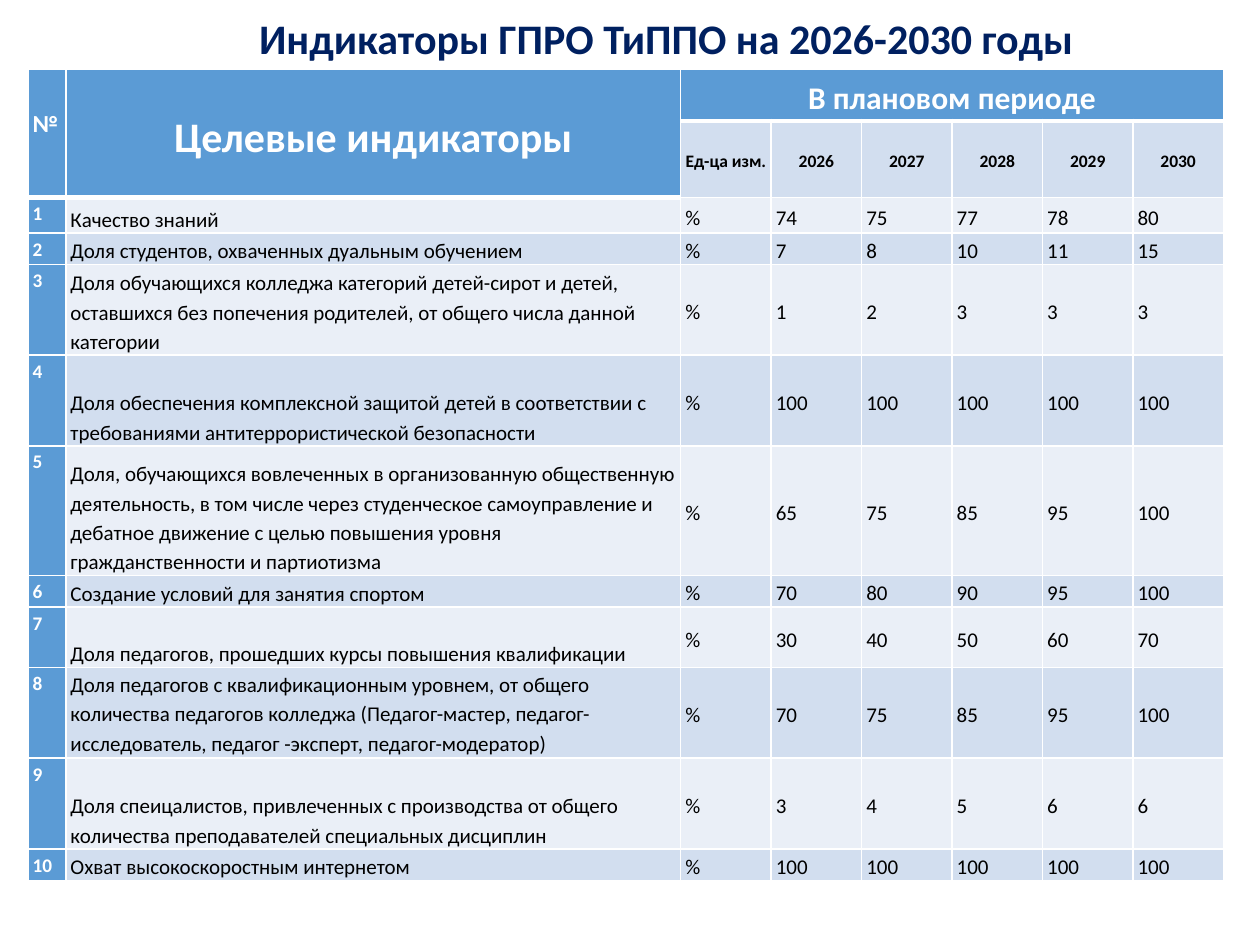
from lxml.etree import SubElement
from pptx import Presentation
from pptx.dml.color import RGBColor
from pptx.enum.text import MSO_ANCHOR, MSO_AUTO_SIZE, PP_ALIGN
from pptx.oxml.ns import qn
from pptx.util import Pt


class Theme:
    font = "Calibri"
    navy, blue, white, black = "002060", "5B9BD5", "FFFFFF", "000000"
    bands = ("EAEFF7", "D2DEEF")
    title, head, span, mark, body, index, unit = 24, 24, 18, 14, 12, 11, 10
    thin, thick = 1, 3


def write(frame, text, size, color, bold=False, align=PP_ALIGN.LEFT):
    para = frame.paragraphs[0]
    para.text = text
    para.alignment = align
    font = para.font
    font.name, font.size, font.bold = Theme.font, Pt(size), bold
    font.color.rgb = RGBColor.from_string(color)
    return para


def edge(cell, side, width):
    props = cell._tc.get_or_add_tcPr()
    line = SubElement(props, qn(f"a:ln{side}"), w=str(Pt(width)))
    fill = SubElement(line, qn("a:solidFill"))
    SubElement(fill, qn("a:srgbClr"), val=Theme.white)


years = ["2026", "2027", "2028", "2029", "2030"]

# Row height, indicator, values by year
goals = [
    (20.2, "Качество знаний", [74, 75, 77, 78, 80]),
    (18, "Доля студентов, охваченных дуальным обучением", [7, 8, 10, 11, 15]),
    (51.8, "Доля обучающихся колледжа категорий детей-сирот и детей, оставшихся "
     "без попечения родителей, от общего числа данной категории", [1, 2, 3, 3, 3]),
    (51.8, "Доля обеспечения комплексной защитой детей в соответствии с "
     "требованиями антитеррористической безопасности", [100] * 5),
    (74.2, "Доля, обучающихся вовлеченных в организованную общественную "
     "деятельность, в том числе через студенческое самоуправление и дебатное "
     "движение с целью повышения уровня гражданственности и партиотизма",
     [65, 75, 85, 95, 100]),
    (18, "Создание условий для занятия спортом", [70, 80, 90, 95, 100]),
    (34.6, "Доля педагогов, прошедших курсы повышения квалификации",
     [30, 40, 50, 60, 70]),
    (51.8, "Доля педагогов с квалификационным уровнем, от общего количества "
     "педагогов колледжа (Педагог-мастер, педагог-исследователь, "
     "педагог -эксперт, педагог-модератор)", [70, 75, 85, 95, 100]),
    (51.8, "Доля спеицалистов, привлеченных с производства от общего количества "
     "преподавателей специальных дисциплин", [3, 4, 5, 6, 6]),
    (18, "Охват высокоскоростным интернетом", [100] * 5),
]

deck = Presentation()
deck.slide_width, deck.slide_height = Pt(720), Pt(540)
slide = deck.slides.add_slide(deck.slide_layouts[6])

# Title
box = slide.shapes.add_textbox(Pt(141), Pt(3.6), Pt(484), Pt(36))
box.text_frame.word_wrap = False
box.text_frame.auto_size = MSO_AUTO_SIZE.SHAPE_TO_FIT_TEXT
write(box.text_frame, "Индикаторы ГПРО ТиППО на 2026-2030 годы",
      Theme.title, Theme.navy, True)

# Table grid
highs = [29.5, 43.9] + [goal[0] for goal in goals]
wides = [21.6, 351.4] + [51.7] * 6
table = slide.shapes.add_table(
    len(highs), len(wides), Pt(16), Pt(39.6),
    Pt(sum(wides)), Pt(sum(highs))).table
for row, high in zip(table.rows, highs):
    row.height = Pt(high)
for col, wide in zip(table.columns, wides):
    col.width = Pt(wide)

# Cell borders, fills and margins
for r in range(len(highs)):
    for c in range(len(wides)):
        cell = table.cell(r, c)
        last = 1 if c < 2 else 0
        edge(cell, "L", Theme.thin)
        edge(cell, "R", Theme.thin)
        edge(cell, "T", Theme.thick if r == last + 1 else Theme.thin)
        edge(cell, "B", Theme.thick if r <= last else Theme.thin)
        dark = c == 0 or r <= last
        cell.fill.solid()
        cell.fill.fore_color.rgb = RGBColor.from_string(
            Theme.blue if dark else Theme.bands[r % 2])
        cell.margin_left = cell.margin_right = Pt(2.7)
        cell.margin_top, cell.margin_bottom = Pt(0.7), Pt(0)
        cell.vertical_anchor = MSO_ANCHOR.TOP if c == 0 else MSO_ANCHOR.MIDDLE

# Header
table.cell(0, 0).merge(table.cell(1, 0))
table.cell(0, 1).merge(table.cell(1, 1))
table.cell(0, 2).merge(table.cell(0, 7))
table.cell(0, 0).margin_top = Pt(20.3)
heads = [
    (0, 0, "№", Theme.mark, Theme.white, PP_ALIGN.LEFT),
    (0, 1, "Целевые индикаторы", Theme.head, Theme.white, PP_ALIGN.CENTER),
    (0, 2, "В плановом периоде", Theme.span, Theme.white, PP_ALIGN.CENTER),
]
for c, text in enumerate(["Ед-ца изм."] + years, 2):
    heads.append((1, c, text, Theme.unit, Theme.black, PP_ALIGN.CENTER))
for r, c, text, size, color, align in heads:
    para = write(table.cell(r, c).text_frame, text, size, color, True, align)
    para.line_spacing = 1.15

# Indicators
for num, (high, name, values) in enumerate(goals, 1):
    for c, text in enumerate([num, name, "%"] + values):
        cell = table.cell(num + 1, c)
        if c == 0:
            para = write(cell.text_frame, str(text), Theme.index, Theme.white, True)
        else:
            para = write(cell.text_frame, str(text), Theme.body, Theme.black)
        para.line_spacing = 1.15
    table.cell(num + 1, 1).vertical_anchor = (
        MSO_ANCHOR.TOP if num == 8 else MSO_ANCHOR.BOTTOM)

deck.save("out.pptx")
